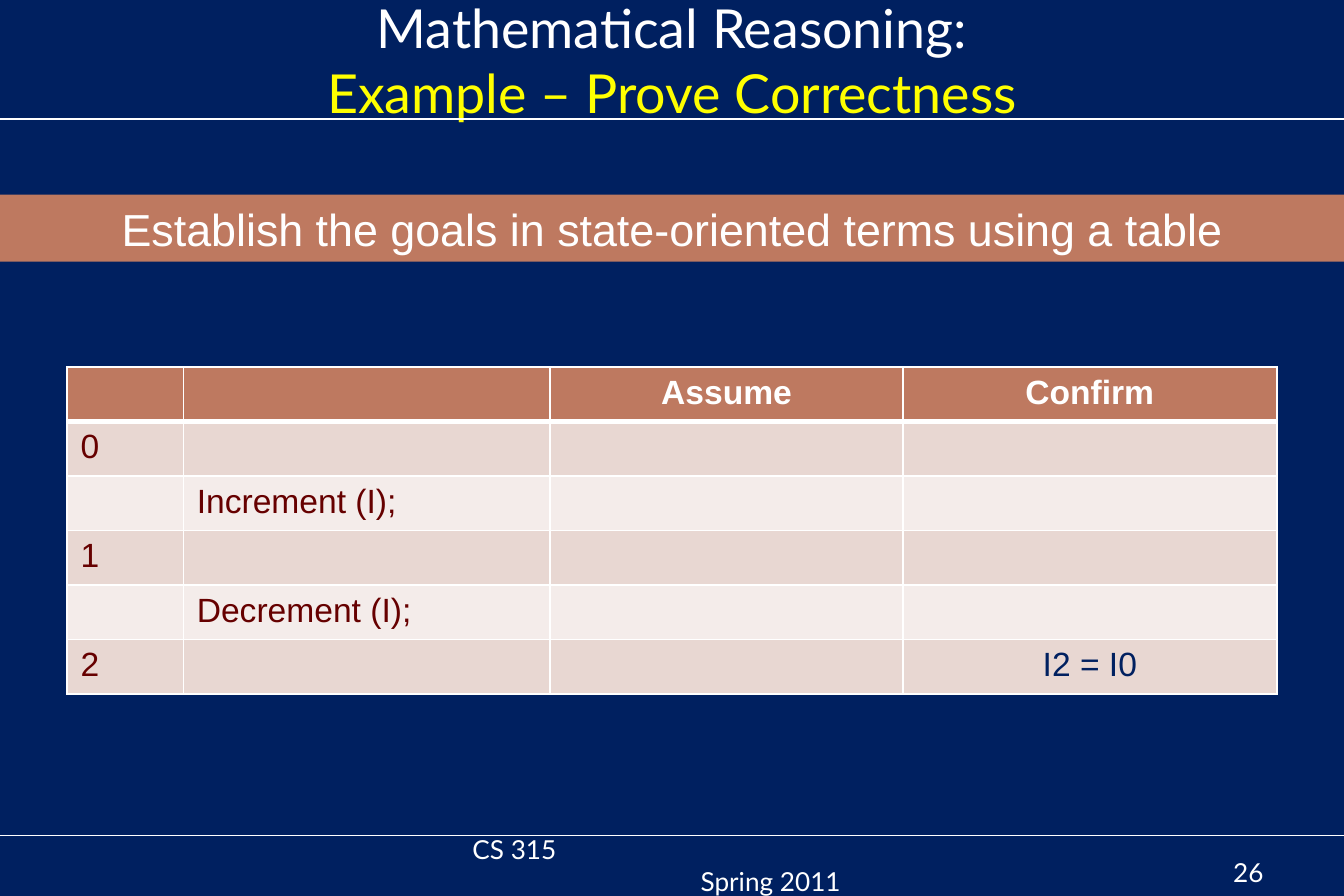
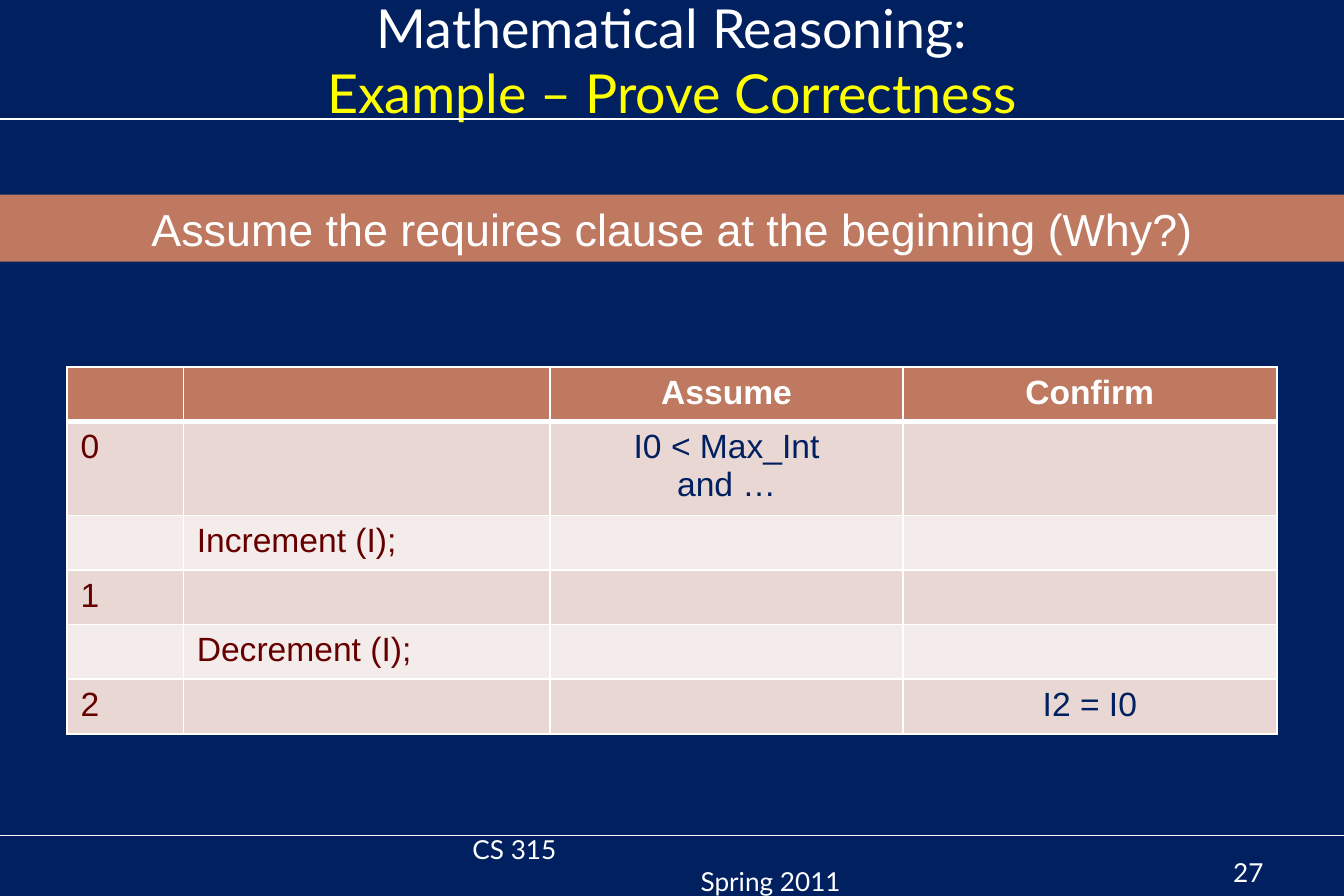
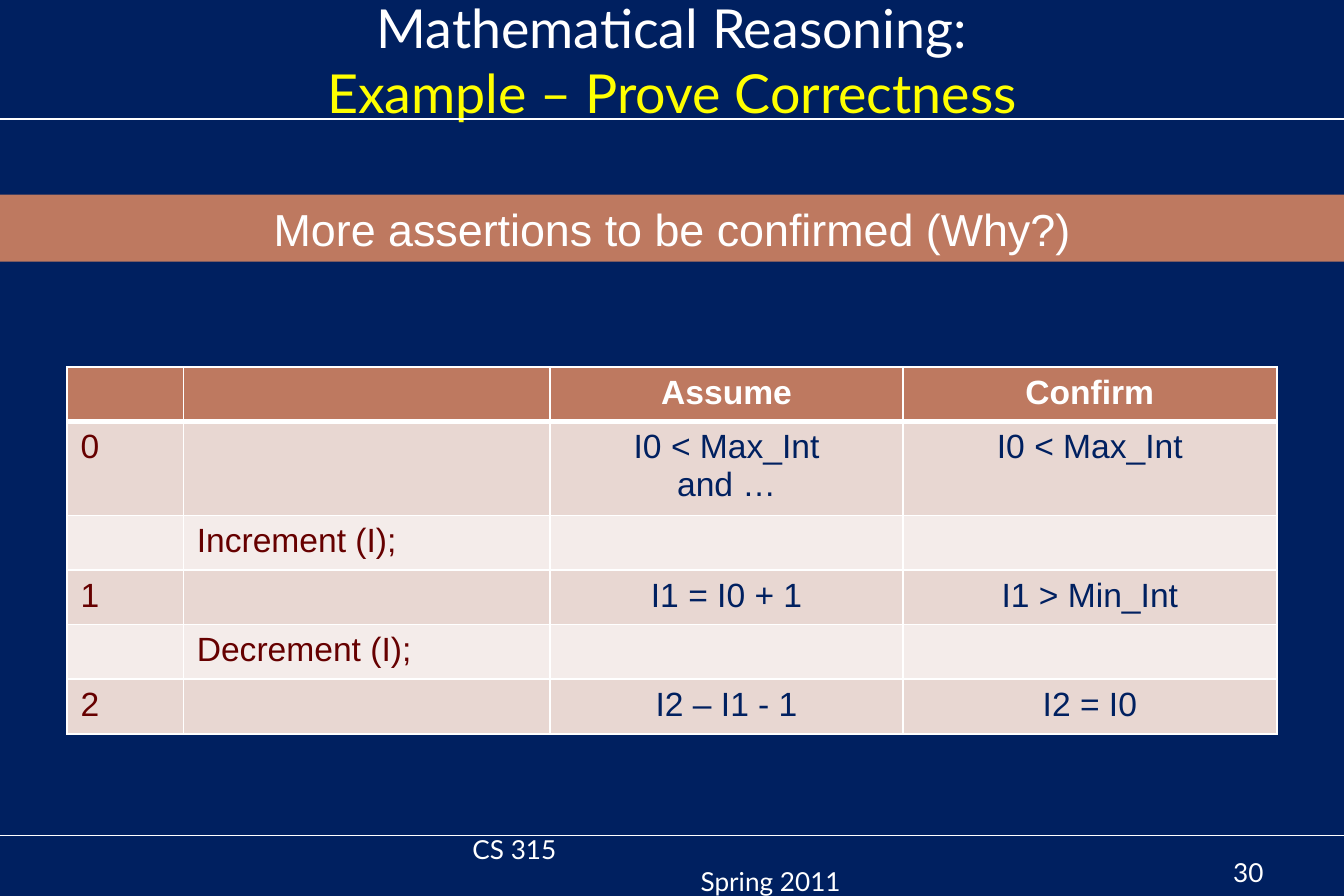
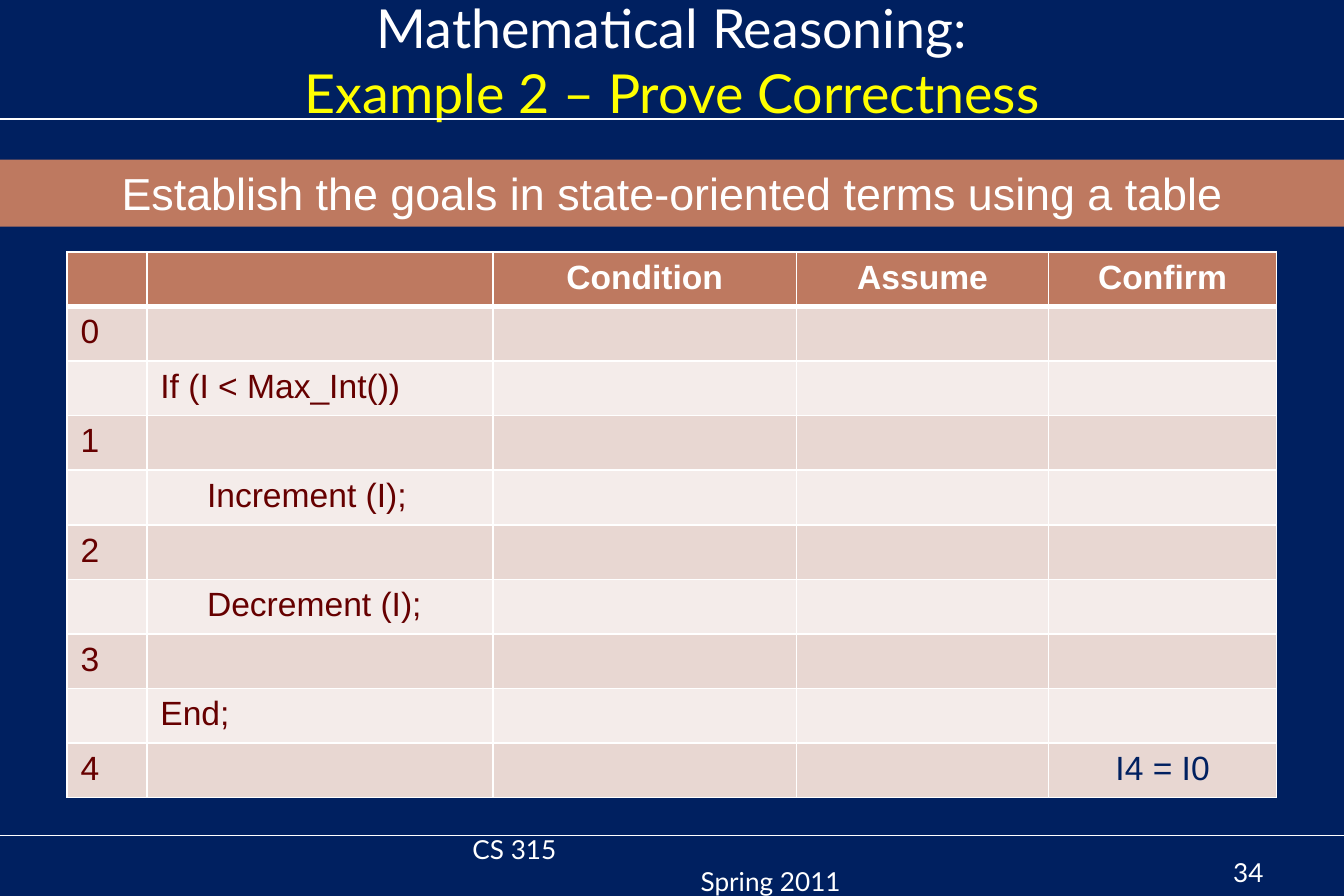
import lxml.etree
import pptx
import pptx.dml.color
import pptx.enum.shapes
import pptx.enum.text
import pptx.oxml.ns
import pptx.util

PX = 9525  # EMU in one px, 96 px to the inch
WIDTH, HEIGHT = 960, 640
MARGIN = 48
ROW_HEIGHT = 39
TITLE_ONLY = 5

COLORS = {
    "navy": "002060",
    "white": "FFFFFF",
    "yellow": "FFFF00",
    "clay": "BE7960",
    "maroon": "660000",
    "odd row": "E8D7D2",
    "even row": "F4ECEA",
}
HEADING_FONT, BODY_FONT = "Lato", "Arial"

ALIGN = pptx.enum.text.PP_ALIGN
ANCHOR = pptx.enum.text.MSO_ANCHOR
AUTO_SIZE = pptx.enum.text.MSO_AUTO_SIZE


def px(*lengths):
    return [pptx.util.Emu(length * PX) for length in lengths]


def rgb(color):
    return pptx.dml.color.RGBColor.from_string(COLORS[color])


def fill_solid(fill, color):
    fill.solid()
    fill.fore_color.rgb = rgb(color)


def format_paragraph(paragraph, size, font, color, align=ALIGN.LEFT, bold=False):
    paragraph.alignment = align
    paragraph.font.size = pptx.util.Pt(size)
    paragraph.font.name = font
    paragraph.font.bold = bold
    paragraph.font.color.rgb = rgb(color)


def add_element(parent, tag, **attributes):
    return lxml.etree.SubElement(parent, pptx.oxml.ns.qn(tag), attributes)


class Deck:
    def __init__(self):
        self.prs = pptx.Presentation()
        self.prs.slide_width, self.prs.slide_height = px(WIDTH, HEIGHT)
        fill_solid(self.prs.slide_master.background.fill, "navy")
        self.slide = None

    def new_slide(self, example, number):
        """Start a slide with its rules, title and footer."""
        layout = self.prs.slide_layouts[TITLE_ONLY]
        self.slide = self.prs.slides.add_slide(layout)
        for y in (597, 85):
            self.rule(y)
        self.title("Mathematical Reasoning:", f"{example} – Prove Correctness")
        self.footer_text((328, 595, 304, 50), ("CS 315", "Spring 2011"), indent=163)
        self.footer_text((688, 595, 224, 44), (str(number),), ALIGN.RIGHT)

    def rule(self, y):
        line = self.slide.shapes.add_connector(
            pptx.enum.shapes.MSO_CONNECTOR.STRAIGHT, *px(0, y, WIDTH, y))
        line.line.color.rgb = rgb("white")
        line.line.width = pptx.util.Pt(0.75)
        add_element(line._element.spPr, "a:effectLst")

    def title(self, topic, example):
        title = self.slide.shapes.title
        title.left, title.top, title.width, title.height = px(MARGIN, 14, WIDTH - 2 * MARGIN, 57)
        frame = title.text_frame
        frame.auto_size = AUTO_SIZE.NONE
        frame.vertical_anchor = ANCHOR.MIDDLE
        heading = frame.paragraphs[0]
        format_paragraph(heading, 28.8, HEADING_FONT, "white", ALIGN.CENTER)
        heading.add_run().text = topic
        heading.add_line_break()
        example_run = heading.add_run()
        example_run.text = example
        example_run.font.color.rgb = rgb("yellow")

    def footer_text(self, box, lines, align=ALIGN.LEFT, indent=0):
        """Write lines at the bottom of a box, each indented further than the last."""
        frame = self.slide.shapes.add_textbox(*px(*box)).text_frame
        frame.word_wrap = True
        frame.vertical_anchor = ANCHOR.BOTTOM
        frame.text = "\n".join(lines)
        for level, paragraph in enumerate(frame.paragraphs):
            format_paragraph(paragraph, 14, HEADING_FONT, "white", align)
            paragraph._p.get_or_add_pPr().set("marL", str(level * indent * PX))

    def band(self, y, message):
        band = self.slide.shapes.add_shape(
            pptx.enum.shapes.MSO_SHAPE.RECTANGLE, *px(0, y, WIDTH, 48))
        band.shadow.inherit = False
        fill_solid(band.fill, "clay")
        band.line.fill.background()
        frame = band.text_frame
        frame.word_wrap = True
        frame.auto_size = AUTO_SIZE.SHAPE_TO_FIT_TEXT
        frame.vertical_anchor = ANCHOR.TOP
        frame.text = message
        format_paragraph(frame.paragraphs[0], 24, BODY_FONT, "white", ALIGN.CENTER)

    def reasoning_table(self, y, widths, goals, statements, assertions):
        """Alternate numbered states with statements; assertions maps (state, goal) to text."""
        rows = [["", "", *goals]]
        for state in range(len(statements) + 1):
            rows.append([str(state), "", *(assertions.get((state, goal), "") for goal in goals)])
            if state < len(statements):
                rows.append(["", statements[state], *[""] * len(goals)])
        table = self.slide.shapes.add_table(
            len(rows), len(widths),
            *px(MARGIN, y, sum(widths), ROW_HEIGHT * len(rows))).table
        for column, width in zip(table.columns, px(*widths)):
            column.width = width
        for row, texts in enumerate(rows):
            for column, text in enumerate(texts):
                self.cell(table.cell(row, column), row, column, text)

    def cell(self, cell, row, column, text):
        is_header, is_goal = row == 0, column >= 2
        self.borders(cell, top=3 if row == 1 else 1, bottom=3 if is_header else 1)
        fill_solid(cell.fill, "clay" if is_header else "odd row" if row % 2 else "even row")
        cell.text = text
        color = "white" if is_header else "navy" if is_goal else "maroon"
        align = ALIGN.CENTER if is_goal else ALIGN.LEFT
        for paragraph in cell.text_frame.paragraphs:
            format_paragraph(paragraph, 18, BODY_FONT, color, align, is_header)

    def borders(self, cell, top, bottom):
        properties = cell._tc.get_or_add_tcPr()
        for side, points in (("L", 1), ("R", 1), ("T", top), ("B", bottom)):
            border = add_element(properties, f"a:ln{side}", w=str(pptx.util.Pt(points)))
            add_element(add_element(border, "a:solidFill"), "a:srgbClr", val=COLORS["white"])


def main():
    deck = Deck()
    establish = "Establish the goals in state-oriented terms using a table"
    goal = {(2, "Confirm"): "I2 = I0"}
    requires = {**goal, (0, "Assume"): "I0 < Max_Int\nand …"}
    confirmed = {
        **requires,
        (0, "Confirm"): "I0 < Max_Int",
        (1, "Assume"): "I1 = I0 + 1",
        (1, "Confirm"): "I1 > Min_Int",
        (2, "Assume"): "I2 – I1 - 1",
    }
    for number, message, assertions in (
        (26, establish, goal),
        (27, "Assume the requires clause at the beginning (Why?)", requires),
        (30, "More assertions to be confirmed (Why?)", confirmed),
    ):
        deck.new_slide("Example", number)
        deck.reasoning_table(262, (83, 262, 252, 267), ("Assume", "Confirm"),
                             ("Increment (I);", "Decrement (I);"), assertions)
        deck.band(139, message)

    deck.new_slide("Example 2", 34)
    deck.reasoning_table(
        180, (57, 247, 217, 180, 163), ("Condition", "Assume", "Confirm"),
        ("If (I < Max_Int())", "     Increment (I);", "     Decrement (I);", "End;"),
        {(4, "Confirm"): "I4 = I0"})
    deck.band(114, establish)
    deck.prs.save("out.pptx")


if __name__ == "__main__":
    main()
